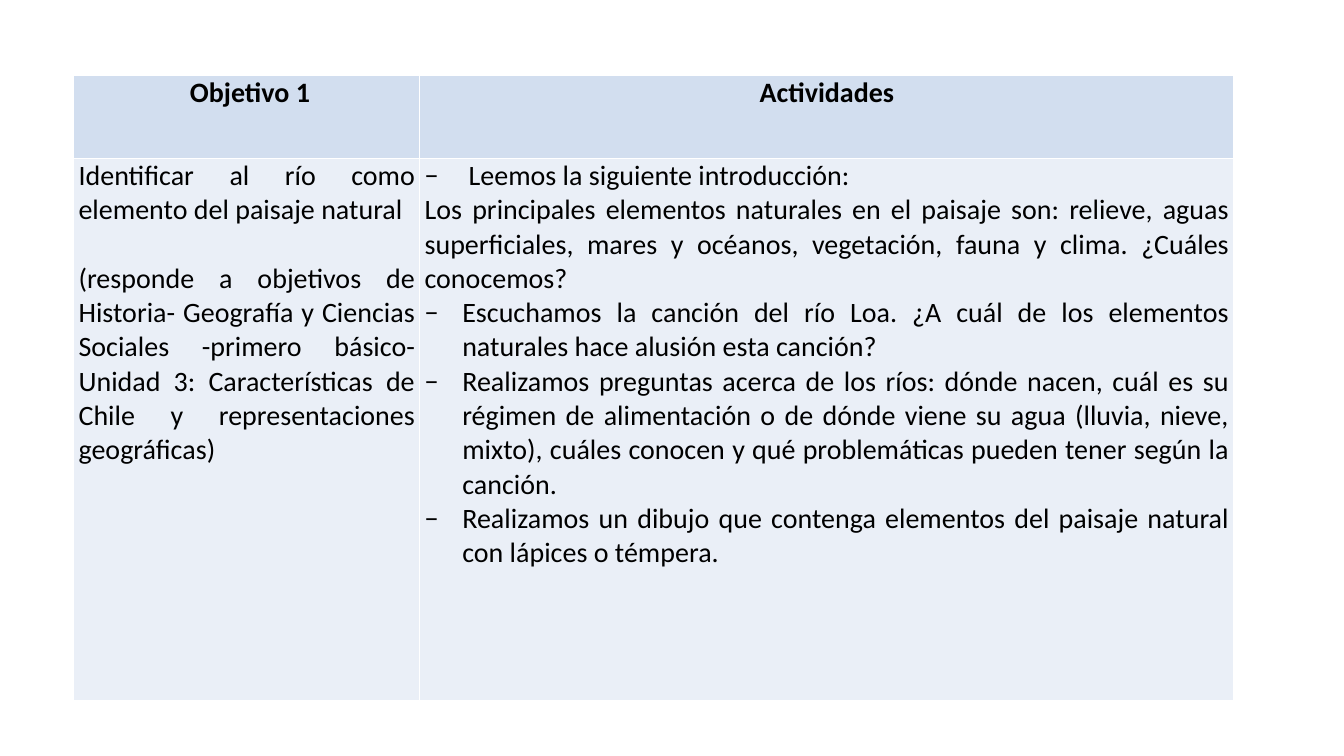
from dataclasses import dataclass

from lxml.etree import SubElement
from pptx import Presentation
from pptx.dml.color import RGBColor
from pptx.enum.text import PP_ALIGN
from pptx.oxml.ns import qn
from pptx.util import Cm, Pt


@dataclass(frozen=True)
class Theme:
    font: str = "Calibri"
    text_size: float = 20
    blank_line: float = 24.4
    border_width: float = 1
    text: str = "000000"
    border: str = "FFFFFF"
    header_fill: str = "D2DEEF"
    body_fill: str = "EAEFF7"


@dataclass(frozen=True)
class Entry:
    text: str
    bullet: bool = False
    gap_before: bool = False


THEME = Theme()
COLUMN_WIDTHS = (8.72, 20.52)
ROW_HEIGHTS = (2.1, 13.65)
HEADERS = (" Objetivo 1", "Actividades")
OBJECTIVE = (
    Entry("Identificar al río como elemento del paisaje natural "),
    Entry(
        "(responde a objetivos de Historia- Geografía y Ciencias Sociales "
        "-primero básico- Unidad 3: Características de Chile y "
        "representaciones geográficas)",
        gap_before=True,
    ),
)
ACTIVITIES = (
    Entry(" Leemos la siguiente introducción: ", bullet=True),
    Entry(
        "Los principales elementos naturales en el paisaje son: relieve, aguas "
        "superficiales, mares y océanos, vegetación, fauna y clima. "
        "¿Cuáles conocemos?"
    ),
    Entry(
        "Escuchamos la canción del río Loa. ¿A cuál de los elementos "
        "naturales hace alusión esta canción?",
        bullet=True,
    ),
    Entry(
        "Realizamos preguntas acerca de los ríos: dónde nacen, cuál es su "
        "régimen de alimentación o de dónde viene su agua (lluvia, nieve, "
        "mixto), cuáles conocen y qué problemáticas pueden tener según la "
        "canción.",
        bullet=True,
    ),
    Entry(
        "Realizamos un dibujo que contenga elementos del paisaje natural "
        "con lápices o témpera.",
        bullet=True,
    ),
)


def add_bullet(paragraph):
    properties = paragraph._p.get_or_add_pPr()
    properties.set("marL", str(Cm(0.95)))
    properties.set("indent", str(-Cm(0.95)))
    SubElement(properties, qn("a:buFont"), typeface=THEME.font)
    SubElement(properties, qn("a:buChar"), char="−")


def write_paragraph(paragraph, entry, alignment, bold):
    paragraph.alignment = alignment
    if entry.gap_before:
        paragraph.space_before = Pt(THEME.blank_line)
    if entry.bullet:
        add_bullet(paragraph)
    run = paragraph.add_run()
    run.text = entry.text
    run.font.name = THEME.font
    run.font.size = Pt(THEME.text_size)
    run.font.bold = bold
    run.font.color.rgb = RGBColor.from_string(THEME.text)


def add_borders(cell):
    properties = cell._tc.get_or_add_tcPr()
    for side in ("lnL", "lnR", "lnT", "lnB"):
        line = SubElement(properties, qn(f"a:{side}"), w=str(Pt(THEME.border_width)))
        fill = SubElement(line, qn("a:solidFill"))
        SubElement(fill, qn("a:srgbClr"), val=THEME.border)


def fill_cell(cell, entries, color, alignment, bold=False):
    add_borders(cell)
    cell.fill.solid()
    cell.fill.fore_color.rgb = RGBColor.from_string(color)
    cell.margin_left = cell.margin_right = Cm(0.12)
    cell.margin_top = cell.margin_bottom = Cm(0)
    for index, entry in enumerate(entries):
        frame = cell.text_frame
        paragraph = frame.add_paragraph() if index else frame.paragraphs[0]
        write_paragraph(paragraph, entry, alignment, bold)


def add_plan_table(slide):
    shape = slide.shapes.add_table(
        len(ROW_HEIGHTS), len(COLUMN_WIDTHS), Cm(1.86), Cm(1.9),
        Cm(sum(COLUMN_WIDTHS)), Cm(sum(ROW_HEIGHTS)),
    )
    table = shape.table
    table.first_row = False
    table.horz_banding = False
    for column, width in zip(table.columns, COLUMN_WIDTHS):
        column.width = Cm(width)
    for row, height in zip(table.rows, ROW_HEIGHTS):
        row.height = Cm(height)
    return table


def main():
    presentation = Presentation()
    presentation.slide_width = Cm(33.87)
    presentation.slide_height = Cm(19.05)
    slide = presentation.slides.add_slide(presentation.slide_layouts[6])
    table = add_plan_table(slide)
    for index, header in enumerate(HEADERS):
        fill_cell(table.cell(0, index), [Entry(header)], THEME.header_fill,
                  PP_ALIGN.CENTER, bold=True)
    for index, entries in enumerate((OBJECTIVE, ACTIVITIES)):
        fill_cell(table.cell(1, index), entries, THEME.body_fill, PP_ALIGN.JUSTIFY)
    presentation.save("out.pptx")


if __name__ == "__main__":
    main()
